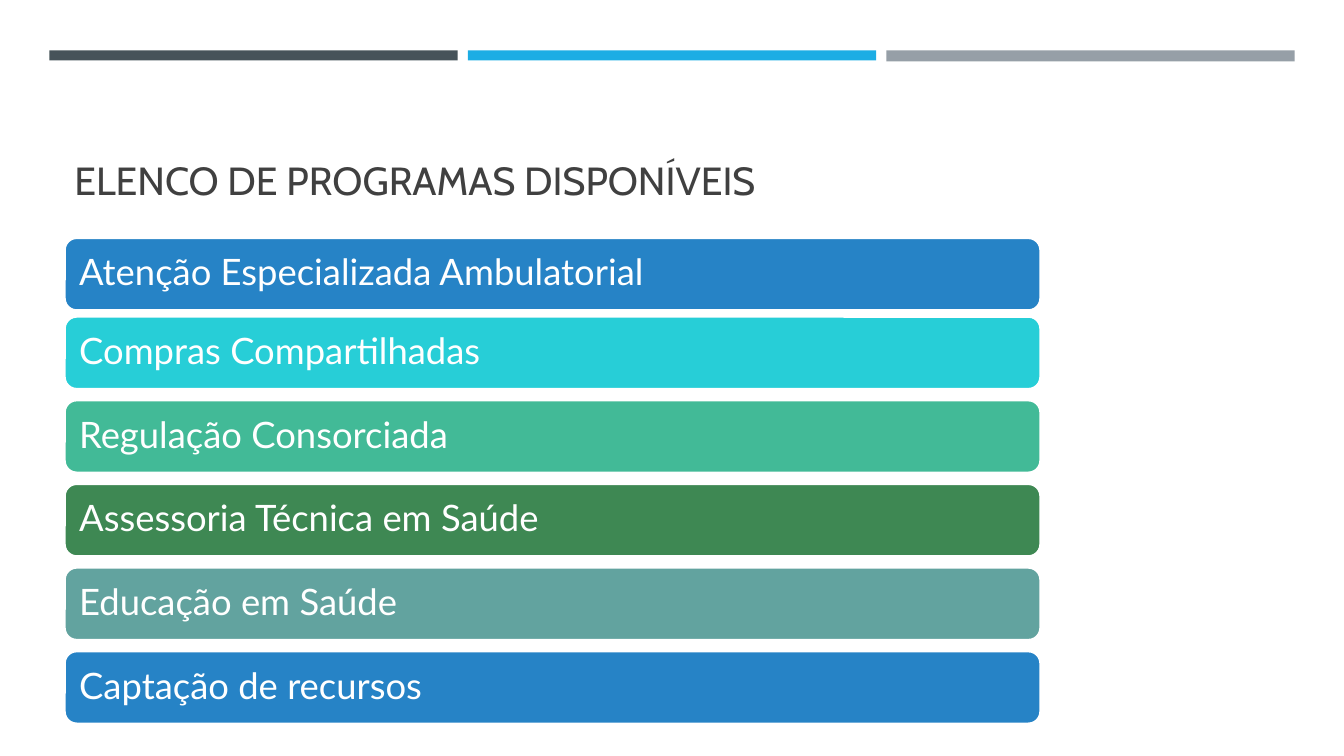
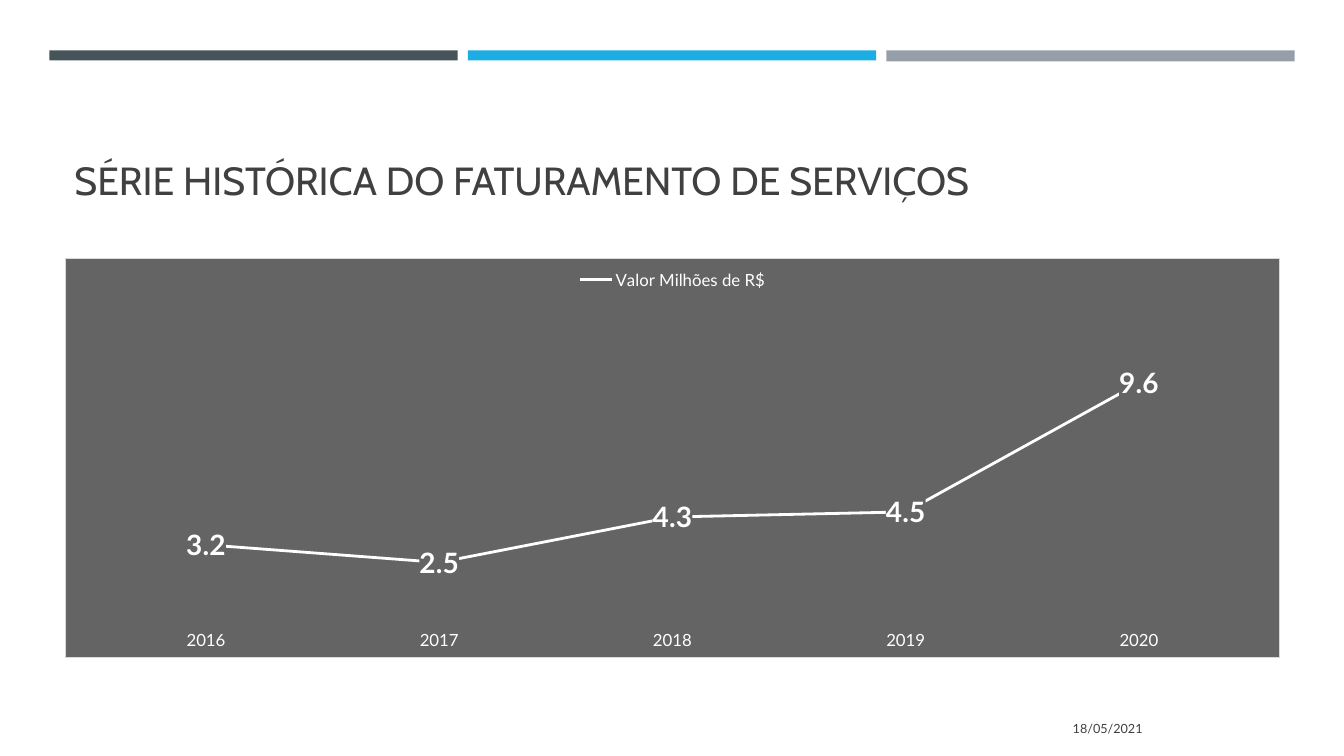
import lxml.etree
import pptx
import pptx.chart.data
import pptx.dml.color
import pptx.enum.chart
import pptx.enum.shapes
import pptx.enum.text
import pptx.oxml
import pptx.oxml.ns
import pptx.util

PX = 9144  # EMU in one px, 100 px to the inch
DARK, WHITE, GREY, EDGE = "404040", "FFFFFF", "646464", "D9D9D9"
BANDS = [("465359", 10), ("1CADE4", 10), ("969FA7", 11)]
ALIGN = pptx.enum.text.PP_ALIGN
ANCHOR = pptx.enum.text.MSO_ANCHOR
SHAPE = pptx.enum.shapes.MSO_SHAPE
CHART = pptx.enum.chart

TITLE = {"name": "Cabin", "size": 28, "color": DARK}
ITEM = {"name": "Lato", "size": 26, "color": WHITE}
DATE = {"name": "Lato", "size": 9, "color": DARK}
SMALL = {"name": "Lato", "size": 12, "color": WHITE}
LABEL = {"name": "Lato", "size": 20, "color": WHITE, "bold": True}

ITEMS = [
    ("Atenção Especializada Ambulatorial", "2683C6"),
    ("Compras Compartilhadas", "27CED7"),
    ("Regulação Consorciada", "42BA97"),
    ("Assessoria Técnica em Saúde", "3E8853"),
    ("Educação em Saúde", "62A39F"),
    ("Captação de recursos", "2683C6"),
]
SALES = {"2016": 3.2, "2017": 2.5, "2018": 4.3, "2019": 4.5, "2020": 9.6}


def px(*nums):
    return [pptx.util.Emu(num * PX) for num in nums]


def rgb(color):
    return pptx.dml.color.RGBColor.from_string(color)


def apply(target, **values):
    for name, value in values.items():
        setattr(target, name, value)


def style(font, form):
    for name, value in form.items():
        if name == "color":
            font.color.rgb = rgb(value)
        else:
            setattr(font, name, pptx.util.Pt(value) if name == "size" else value)


def write(frame, text, form, anchor, align=ALIGN.LEFT, space=1.0):
    apply(frame, word_wrap=True, vertical_anchor=anchor)
    para = frame.paragraphs[0]
    apply(para, alignment=align, line_spacing=space)
    run = para.add_run()
    run.text = text
    style(run.font, form)


def add_text(slide, box, text, form, anchor, align=ALIGN.LEFT):
    frame = slide.shapes.add_textbox(*px(*box)).text_frame
    write(frame, text, form, anchor, align)


def add_block(slide, kind, box, fill, line=None):
    block = slide.shapes.add_shape(kind, *px(*box))
    block.shadow.inherit = False
    block.fill.solid()
    block.fill.fore_color.rgb = rgb(fill)
    if line:
        block.line.color.rgb = rgb(line)
        block.line.width = pptx.util.Pt(1.75)
    else:
        block.line.fill.background()
    return block


def add_item(slide, top, text, fill):
    box = (64, top, 968, 72)
    frame = add_block(slide, SHAPE.ROUNDED_RECTANGLE, box, fill, WHITE).text_frame
    sides = ("left", "top", "right", "bottom")
    apply(frame, **{f"margin_{side}": px(11)[0] for side in sides})
    write(frame, text, ITEM, ANCHOR.MIDDLE, space=0.9)


def add_slide(deck, title):
    """Add a slide with the shared bands and title."""
    slide = deck.slides.add_slide(deck.slide_layouts[6])
    for i, (color, height) in enumerate(BANDS):
        add_block(slide, SHAPE.RECTANGLE, (49 + 415 * i, 50, 405, height), color)
    add_text(slide, (64, 77, 1206, 130), title, TITLE, ANCHOR.BOTTOM)
    return slide


def area(fill, line=None):
    """Return chart XML for a filled area with an optional border."""
    spaces = pptx.oxml.ns.nsdecls("c", "a")
    paint = '<a:solidFill><a:srgbClr val="{}"/></a:solidFill>'
    edge = f'<a:ln w="9525">{paint.format(line)}</a:ln>' if line else ""
    return pptx.oxml.parse_xml(
        f"<c:spPr {spaces}>{paint.format(fill)}{edge}</c:spPr>")


def place_plot(chart, **parts):
    """Fix the inner plot area, in fractions of the chart."""
    plot = chart.element.xpath("c:chart/c:plotArea")[0]
    for old in plot.xpath("c:layout"):
        plot.remove(old)
    values = {"layoutTarget": "inner", "xMode": "edge", "yMode": "edge", **parts}
    tags = "".join(f'<c:{tag} val="{val}"/>' for tag, val in values.items())
    plot.insert(0, pptx.oxml.parse_xml(
        f'<c:layout {pptx.oxml.ns.nsdecls("c")}>'
        f"<c:manualLayout>{tags}</c:manualLayout></c:layout>"))


def add_chart(slide, box, name, sales):
    data = pptx.chart.data.CategoryChartData(number_format="0.0")
    data.categories = list(sales)
    data.add_series(name, list(sales.values()))
    chart = slide.shapes.add_chart(
        CHART.XL_CHART_TYPE.LINE, *px(*box), data).chart
    apply(chart, has_title=False, has_legend=True)
    style(chart.font, {"name": "Lato", "size": 10, "color": "000000"})
    apply(chart.legend, position=CHART.XL_LEGEND_POSITION.TOP,
          include_in_layout=False)
    style(chart.legend.font, SMALL)

    years = chart.category_axis
    apply(years, major_tick_mark=CHART.XL_TICK_MARK.NONE,
          has_major_gridlines=False)
    years.format.line.fill.background()
    style(years.tick_labels.font, SMALL)
    apply(chart.value_axis, visible=False, has_major_gridlines=False,
          minimum_scale=0, maximum_scale=12)

    chart.plots[0].vary_by_categories = False
    series = chart.plots[0].series[0]
    series.smooth = False
    series.marker.style = CHART.XL_MARKER_STYLE.NONE
    series.format.line.color.rgb = rgb(WHITE)
    series.format.line.width = pptx.util.Pt(2)
    labels = series.data_labels
    apply(labels, show_value=True, number_format="0.0",
          number_format_is_linked=False,
          position=CHART.XL_LABEL_POSITION.CENTER)
    style(labels.font, LABEL)

    root = chart.element
    root.xpath(".//c:ser/c:dLbls/c:txPr")[0].addprevious(area(GREY))
    root.xpath("c:chart")[0].addnext(area(GREY, EDGE))
    place_plot(chart, x=0.02, y=0.16, w=0.96, h=0.76)


def main():
    deck = pptx.Presentation()
    deck.slide_width, deck.slide_height = px(1333, 750)

    slide = add_slide(deck, "ELENCO DE PROGRAMAS DISPONÍVEIS")
    for i, (text, fill) in enumerate(ITEMS):
        add_item(slide, max(236, 231 + 83 * i), text, fill)

    slide = add_slide(deck, "SÉRIE HISTÓRICA DO FATURAMENTO DE SERVIÇOS")
    add_text(slide, (832, 703, 311, 40), "18/05/2021", DATE,
             ANCHOR.MIDDLE, ALIGN.RIGHT)
    add_chart(slide, (64, 256, 1206, 397), "Valor Milhões de R$", SALES)

    deck.save("out.pptx")


if __name__ == "__main__":
    main()
